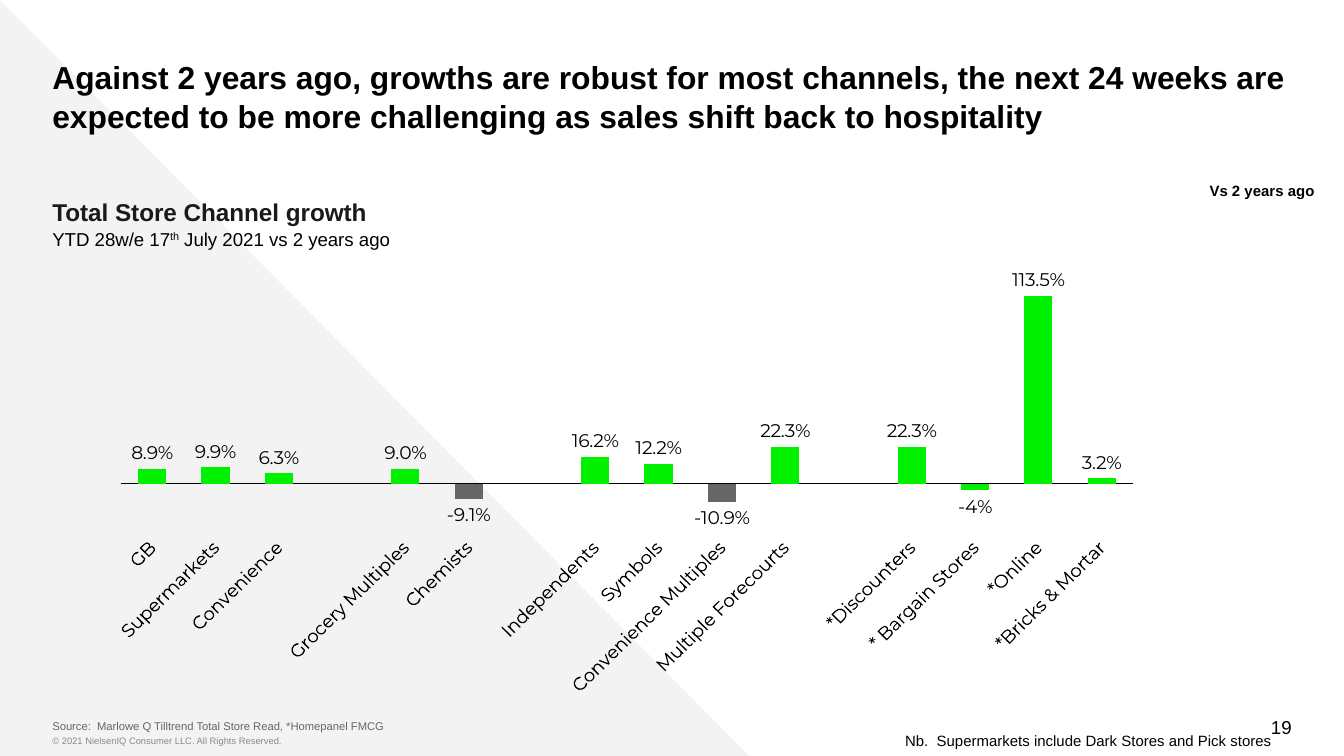
from lxml import etree
from pptx import Presentation
from pptx.chart.data import CategoryChartData
from pptx.dml.color import RGBColor
from pptx.enum.chart import XL_CHART_TYPE, XL_LABEL_POSITION, XL_TICK_LABEL_POSITION, XL_TICK_MARK
from pptx.enum.shapes import MSO_SHAPE
from pptx.enum.text import MSO_ANCHOR, PP_ALIGN
from pptx.oxml import parse_xml
from pptx.oxml.ns import nsdecls, qn
from pptx.util import Cm, Pt

TRIANGLE = MSO_SHAPE.RIGHT_TRIANGLE
COLUMNS = XL_CHART_TYPE.COLUMN_CLUSTERED
OUTSIDE_END = XL_LABEL_POSITION.OUTSIDE_END
LABELS_LOW = XL_TICK_LABEL_POSITION.LOW
NO_TICK = XL_TICK_MARK.NONE
TOP, MIDDLE, BOTTOM = MSO_ANCHOR.TOP, MSO_ANCHOR.MIDDLE, MSO_ANCHOR.BOTTOM
LEFT, RIGHT = PP_ALIGN.LEFT, PP_ALIGN.RIGHT

BLACK = RGBColor(0x00, 0x00, 0x00)
CHARCOAL = RGBColor(0x1A, 0x1A, 0x1A)
GREY = RGBColor(0x66, 0x66, 0x66)
MID_GREY = RGBColor(0x88, 0x88, 0x88)
PALE_GREY = RGBColor(0xF3, 0xF3, 0xF3)
GREEN = RGBColor(0x00, 0xF0, 0x00)


def add_span(para, text, size, color=BLACK, bold=False, superscript=False):
    span = para.add_run()
    span.text = text
    span.font.name = "Arial"
    span.font.size = Pt(size)
    span.font.bold = bold
    span.font.color.rgb = color
    if superscript:
        span.font._element.set("baseline", "30000")


def add_text(text, left, top, width, height, size, color=BLACK, bold=False,
             align=LEFT, anchor=TOP, side=0, edge=0.13, spacing=None):
    box = page.shapes.add_textbox(Cm(left), Cm(top), Cm(width), Cm(height))
    frame = box.text_frame
    frame.word_wrap = True
    frame.vertical_anchor = anchor
    frame.margin_left = frame.margin_right = Cm(side)
    frame.margin_top = frame.margin_bottom = Cm(edge)
    para = frame.paragraphs[0]
    para.alignment = align
    if spacing:
        para.line_spacing = spacing
    add_span(para, text, size, color, bold)
    return para


deck = Presentation()
deck.slide_width, deck.slide_height = Cm(25.4), Cm(14.29)
page = deck.slides.add_slide(deck.slide_layouts[6])

# Background triangle
triangle = page.shapes.add_shape(TRIANGLE, 0, 0, Cm(14.2), Cm(14.33))
triangle.shadow.inherit = False
triangle.fill.solid()
triangle.fill.fore_color.rgb = PALE_GREY
triangle.line.fill.background()

# Footer
add_text("© 2021 NielsenIQ Consumer LLC. All Rights Reserved.",
         0.99, 13.79, 14.07, 0.51, 5, MID_GREY)
add_text("19", 18.69, 13.36, 5.72, 0.76, 10, align=RIGHT, anchor=MIDDLE)

# Chart heading
heading = add_text("Total Store Channel growth", 0.99, 3.58, 10.57, 1.24, 13,
                   CHARCOAL, bold=True, spacing=1.04)
heading.add_line_break()
add_span(heading, "YTD 28w/e 17", 10)
add_span(heading, "th", 10, superscript=True)
add_span(heading, " July 2021 vs 2 years ago", 10)

# Title and source
add_text("Against 2 years ago, growths are robust for most channels, the next 24 weeks "
         "are expected to be more challenging as sales shift back to hospitality",
         0.99, 0.81, 24.23, 1.12, 17, bold=True, edge=0.25, spacing=1.04)
add_text("Source:  Marlowe Q Tilltrend Total Store Read, *Homepanel FMCG",
         0.99, 13.46, 22.66, 0.51, 6, GREY, anchor=BOTTOM, edge=0.25)

# Growth by channel; empty categories separate the groups
growth = [
    ("GB", 0.089), ("Supermarkets", 0.099), ("Convenience", 0.063), ("", None),
    ("Grocery Multiples", 0.09), ("Chemists", -0.091), ("", None),
    ("Independents", 0.162), ("Symbols", 0.122), ("Convenience Multiples", -0.109),
    ("Multiple Forecourts", 0.223), ("", None),
    ("*Discounters", 0.223), ("* Bargain Stores", -0.04), ("*Online", 1.135),
    ("*Bricks & Mortar", 0.032),
]
channels = [channel for channel, value in growth]
data = CategoryChartData(number_format="0.0%")
data.categories = channels
data.add_series("Series 1", [value for channel, value in growth])
chart = page.shapes.add_chart(COLUMNS, Cm(2.08), Cm(4.22), Cm(19.94), Cm(8.94), data).chart
chart.has_legend = False
chart.has_title = False
chart.font.name = "Montserrat"
chart.font.size = Pt(10)
chart.font.color.rgb = BLACK

# Axes
value_axis = chart.value_axis
value_axis.visible = False
value_axis.has_major_gridlines = False
value_axis.minimum_scale, value_axis.maximum_scale = -0.24, 1.4
category_axis = chart.category_axis
category_axis.tick_label_position = LABELS_LOW
category_axis.major_tick_mark = NO_TICK
category_axis.format.line.color.rgb = BLACK
category_axis.format.line.width = Pt(0.75)
category_axis.tick_labels.font.size = Pt(10)
category_axis._element.find(qn("c:txPr")).find(qn("a:bodyPr")).set("rot", "-2700000")

# Columns
plot = chart.plots[0]
plot.gap_width = 125
plot.vary_by_categories = False
series = plot.series[0]
series.invert_if_negative = False
series.format.fill.solid()
series.format.fill.fore_color.rgb = GREEN
for channel in ("Chemists", "Convenience Multiples"):
    fill = series.points[channels.index(channel)].format.fill
    fill.solid()
    fill.fore_color.rgb = GREY

# Value labels, with one rounded to a whole percentage
labels = series.data_labels
labels.show_value = True
labels.number_format = "0.0%"
labels.number_format_is_linked = False
labels.position = OUTSIDE_END
rounded = series.points[channels.index("* Bargain Stores")].data_label
rounded.font.size = Pt(10)
rounded.position = OUTSIDE_END
number_format = etree.Element(qn("c:numFmt"), formatCode="0%", sourceLinked="0")
labels._element.find(qn("c:dLbl")).find(qn("c:idx")).addnext(number_format)

# Fixed plot area
plot_area = category_axis._element.getparent()
for layout in plot_area.findall(qn("c:layout")):
    plot_area.remove(layout)
plot_area.insert(0, parse_xml(
    f'<c:layout {nsdecls("c")}><c:manualLayout><c:layoutTarget val="inner"/>'
    '<c:xMode val="edge"/><c:yMode val="edge"/><c:x val="0.01"/><c:y val="0.063"/>'
    '<c:w val="0.96"/><c:h val="0.585"/></c:manualLayout></c:layout>'))

# Notes beside the chart
add_text("Nb.  Supermarkets include Dark Stores and Pick stores",
         15.98, 13.69, 8.31, 0.61, 8, align=RIGHT, side=0.25)
add_text("Vs 2 years ago", 22.61, 3.3, 2.64, 0.61, 8, bold=True, side=0.25)

deck.save("out.pptx")
